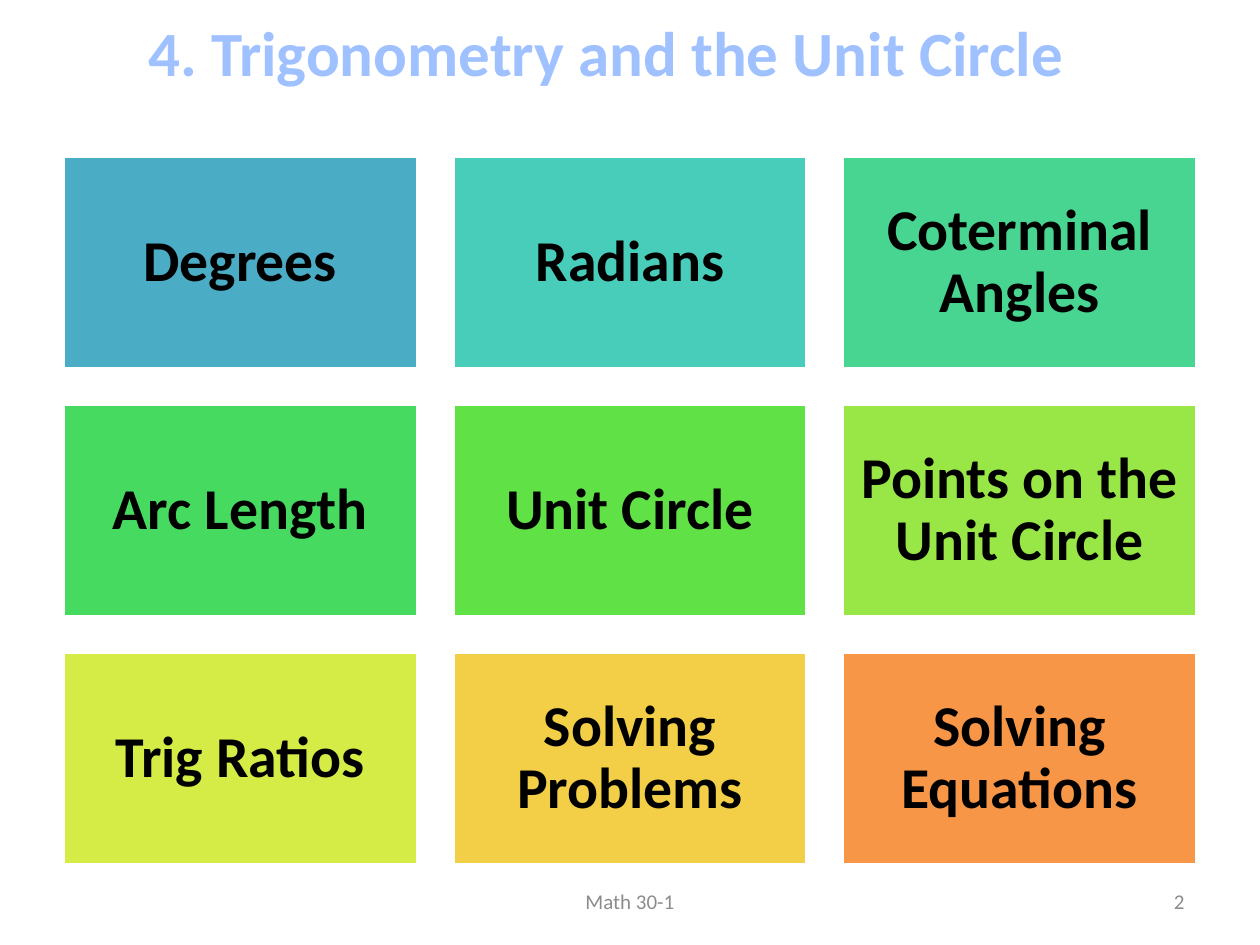
from collections import namedtuple

import pptx
import pptx.dml.color
import pptx.enum.shapes
import pptx.enum.text
import pptx.util

Box = namedtuple("Box", "left top width height")

# The slide is a grid of 100 columns by 75 rows.
COLUMNS, ROWS = 100, 75
CELL = pptx.util.Inches(0.1)
FONT = "Calibri"
COLORS = {
    "title": "A0C1FF",
    "topic_text": "000000",
    "tile_edge": "FFFFFF",
    "footer": "8C8C8C",
}
TOPICS = {
    "Degrees": "4BACC6",
    "Radians": "49CDBB",
    "Coterminal Angles": "48D491",
    "Arc Length": "47DA61",
    "Unit Circle": "60E146",
    "Points on the Unit Circle": "98E746",
    "Trig Ratios": "D5EC46",
    "Solving Problems": "F2CF46",
    "Solving Equations": "F79646",
}
ALIGN = pptx.enum.text.PP_ALIGN
ANCHOR = pptx.enum.text.MSO_ANCHOR


def rgb(value):
    return pptx.dml.color.RGBColor.from_string(value)


def to_emu(box):
    """Turn grid columns and rows into slide lengths."""
    return [round(length * CELL) for length in box]


def write(shape, words, size, color, align=ALIGN.CENTER, bold=False,
          anchor=ANCHOR.MIDDLE, wrap=True):
    """Fill the shape with one formatted run and return its paragraph."""
    frame = shape.text_frame
    frame.word_wrap = wrap
    frame.vertical_anchor = anchor
    paragraph = frame.paragraphs[0]
    paragraph.alignment = align
    run = paragraph.add_run()
    run.text = words
    run.font.name = FONT
    run.font.size = pptx.util.Pt(size)
    run.font.bold = bold
    run.font.color.rgb = rgb(color)
    return paragraph


def add_title(slide, box):
    title = slide.shapes.add_textbox(*to_emu(box))
    write(title, "4. Trigonometry and the Unit Circle", 36, COLORS["title"],
          bold=True, anchor=ANCHOR.TOP, wrap=False)


def add_topic_tile(slide, box, topic, fill):
    tile = slide.shapes.add_shape(
        pptx.enum.shapes.MSO_SHAPE.RECTANGLE, *to_emu(box))
    tile.shadow.inherit = False
    tile.fill.solid()
    tile.fill.fore_color.rgb = rgb(fill)
    tile.line.color.rgb = rgb(COLORS["tile_edge"])
    tile.line.width = pptx.util.Pt(2)
    frame = tile.text_frame
    frame.margin_left = frame.margin_right = round(1.4 * CELL)
    frame.margin_top = frame.margin_bottom = round(1.4 * CELL)
    paragraph = write(tile, topic, 33, COLORS["topic_text"], bold=True)
    paragraph.line_spacing = 0.9


def add_topic_grid(slide, box, per_row=3):
    """Lay the topics out with gaps of a tenth of a tile's width."""
    tile_width = box.width / (per_row + 0.1 * (per_row - 1))
    tile_height = 0.6 * tile_width
    gap = 0.1 * tile_width
    for index, (topic, fill) in enumerate(TOPICS.items()):
        row, column = divmod(index, per_row)
        tile_box = Box(box.left + column * (tile_width + gap),
                       box.top + row * (tile_height + gap),
                       tile_width, tile_height)
        add_topic_tile(slide, tile_box, topic, fill)


def add_footer(slide, box):
    course_width, number_width = 31.7, 23.3
    course_box = box._replace(
        left=box.left + (box.width - course_width) / 2, width=course_width)
    number_box = box._replace(
        left=box.left + box.width - number_width, width=number_width)
    for part_box, words, align in (
        (course_box, "Math 30-1", ALIGN.CENTER),
        (number_box, "2", ALIGN.RIGHT),
    ):
        part = slide.shapes.add_textbox(*to_emu(part_box))
        write(part, words, 12, COLORS["footer"], align)


def main():
    deck = pptx.Presentation()
    deck.slide_width = COLUMNS * CELL
    deck.slide_height = ROWS * CELL
    slide = deck.slides.add_slide(deck.slide_layouts[6])
    add_title(slide, Box(10.4, 0.6, 75.4, 7.1))
    add_topic_grid(slide, Box(5, 12.4, 90, 56.3))
    add_footer(slide, Box(5, 69.5, 90, 4))
    deck.save("out.pptx")


if __name__ == "__main__":
    main()
